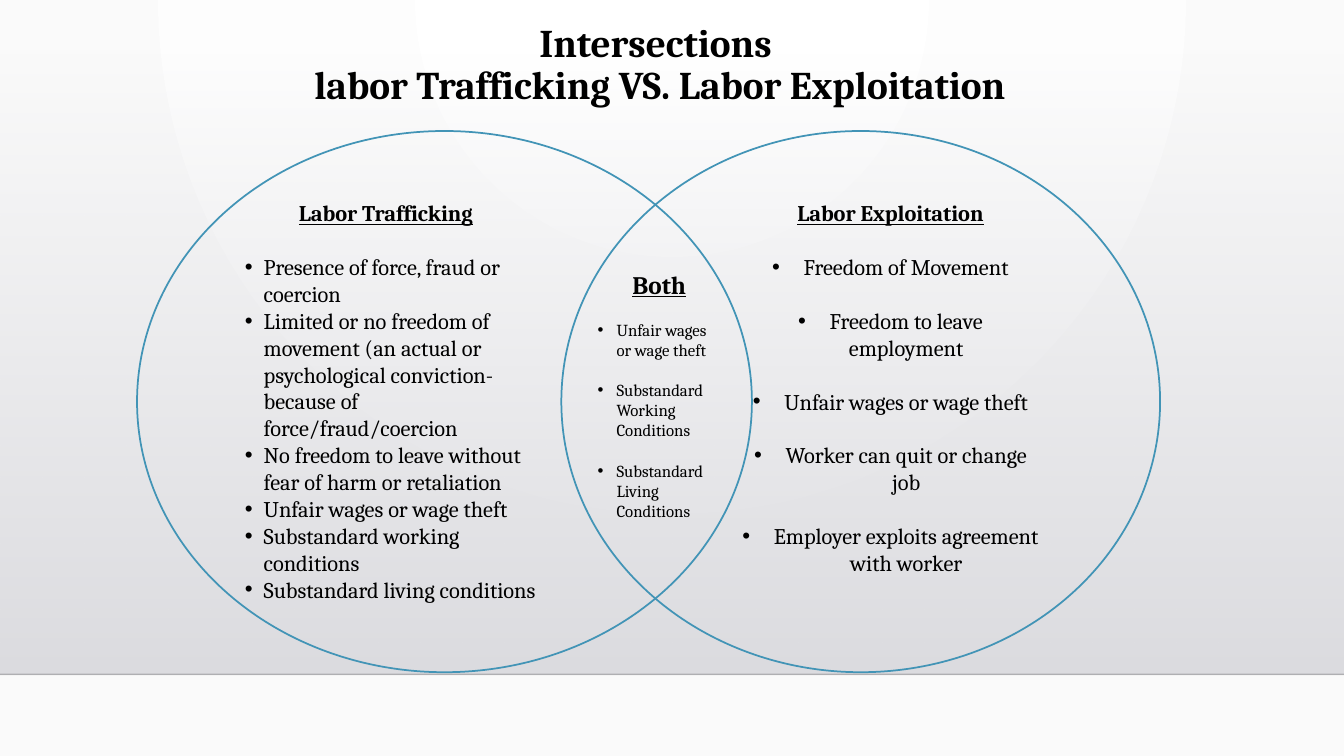
from lxml.etree import SubElement
from pptx import Presentation
from pptx.dml.color import RGBColor
from pptx.enum.shapes import MSO_CONNECTOR as Connector, MSO_SHAPE as Shape
from pptx.enum.text import MSO_ANCHOR as Anchor, PP_ALIGN as Align
from pptx.oxml.ns import qn
from pptx.util import Pt

BLACK = RGBColor(0, 0, 0)
WHITE = RGBColor(0xFF, 0xFF, 0xFF)
PAPER = RGBColor(0xFA, 0xFA, 0xFA)
MIST = RGBColor(0xDC, 0xDC, 0xE0)
FOG = RGBColor(0xDE, 0xDE, 0xE2)
BLUE = RGBColor(0x42, 0x94, 0xB6)

WIDTH, HEIGHT, FLOOR = 960, 540, 481.7
CIRCLE_TOP, CIRCLE_HEIGHT = 93.6, 386.6
LINE_16, LINE_12 = 19.2, 14.4

TRAFFICKING = [
    "Presence of force, fraud or coercion",
    "Limited or no freedom of movement (an actual or psychological "
    "conviction-because of force/fraud/coercion",
    "No freedom to leave without fear of harm or retaliation",
    "Unfair wages or wage theft",
    "Substandard working conditions",
    "Substandard living conditions",
]
BOTH = [
    "Unfair wages or wage theft",
    "Substandard Working Conditions",
    "Substandard Living Conditions",
]
EXPLOITATION = [
    "Freedom of Movement",
    "Freedom to leave employment",
    "Unfair wages or wage theft",
    "Worker can quit or change job",
    "Employer exploits agreement with worker",
]


def apply(target, values):
    for name, value in values.items():
        setattr(target, name, value)


class VennSlide:
    def __init__(self, page):
        self.page = page
        self.font = {"name": "Cambria", "color": BLACK}

    def gradient(self, fill, colors):
        fill.gradient()
        for stop, color in zip(fill.gradient_stops, colors):
            stop.color.rgb = color

    def transparency(self, element, opacity):
        color = next(element.iter(qn("a:srgbClr")))
        SubElement(color, qn("a:alpha"), val=str(opacity * 1000))

    def background(self):
        self.gradient(self.page.background.fill, (WHITE, PAPER))
        grad = next(self.page.element.iter(qn("a:gradFill")))
        grad.remove(grad.find(qn("a:lin")))
        circle = SubElement(grad, qn("a:path"), {"path": "circle"})
        SubElement(circle, qn("a:fillToRect"), l="43000", t="0", r="43000", b="100000")

    def wall(self, top):
        wall = self.page.shapes.add_shape(
            Shape.RECTANGLE, 0, Pt(top), Pt(WIDTH), Pt(FLOOR - top))
        wall.shadow.inherit = False
        self.gradient(wall.fill, (MIST, FOG))
        wall.fill.gradient_angle = 270
        self.transparency(wall.element.spPr, 0)
        wall.line.fill.background()

    def floor_line(self):
        edge = self.page.shapes.add_connector(
            Connector.STRAIGHT, 0, Pt(FLOOR), Pt(WIDTH), Pt(FLOOR))
        edge.line.color.rgb = BLACK
        edge.line.width = Pt(1)
        self.transparency(edge.element.spPr, 20)
        SubElement(edge.element.spPr, qn("a:effectLst"))

    def circle(self, left, width):
        circle = self.page.shapes.add_shape(
            Shape.FLOWCHART_CONNECTOR, Pt(left), Pt(CIRCLE_TOP), Pt(width), Pt(CIRCLE_HEIGHT))
        circle.shadow.inherit = False
        circle.fill.background()
        circle.line.color.rgb = BLUE
        circle.line.width = Pt(1.25)

    def text_box(self, left, top, width, height):
        box = self.page.shapes.add_textbox(Pt(left), Pt(top), Pt(width), Pt(height))
        apply(box.text_frame, {"word_wrap": True, "vertical_anchor": Anchor.TOP})
        return box.text_frame

    def span(self, para, text, size, **style):
        span = para.add_run()
        span.text = text
        apply(span.font, {"name": self.font["name"], "size": Pt(size), **style})
        span.font.color.rgb = self.font["color"]

    def title(self, lines, place):
        para = self.text_box(*place).paragraphs[0]
        apply(para, {"alignment": Align.CENTER, "line_spacing": 0.9})
        for index, line in enumerate(lines):
            if index:
                para.add_line_break()
            self.span(para, line, 28, bold=True)

    def bullet(self, para, hang):
        properties = para._p.get_or_add_pPr()
        properties.set("marL", str(Pt(hang)))
        properties.set("indent", str(-Pt(hang)))
        SubElement(properties, qn("a:buFont"), typeface="Arial")
        SubElement(properties, qn("a:buChar"), char="•")

    def column(self, place, heading, items, sizes, hang, align, gaps, shift=0):
        frame = self.text_box(*place)
        para = frame.paragraphs[0]
        para.alignment = Align.LEFT if shift else Align.CENTER
        if shift:
            para._p.get_or_add_pPr().set("marL", str(Pt(shift)))
        self.span(para, heading, sizes[0], bold=True, underline=True)
        for index, item in enumerate(items):
            para = frame.add_paragraph()
            self.bullet(para, hang)
            apply(para, {"alignment": align, "space_before": Pt(gaps[min(index, 1)])})
            self.span(para, item, sizes[1])


def main():
    deck = Presentation()
    apply(deck, {"slide_width": Pt(WIDTH), "slide_height": Pt(HEIGHT)})
    venn = VennSlide(deck.slides.add_slide(deck.slide_layouts[6]))
    venn.background()
    venn.wall(36.7)
    venn.floor_line()
    venn.title(["Intersections ", "labor Trafficking VS. Labor Exploitation"],
               (135.4, 13, 671.8, 126))
    venn.column((167.8, 139, 232.6, 319.7), "Labor Trafficking", TRAFFICKING,
                (16, 16), 13.5, Align.LEFT, (LINE_16, 0), shift=38.6)
    venn.circle(97.9, 439.2)
    venn.circle(401, 427.7)
    venn.column((419.8, 188.6, 102.2, 188.6), "Both", BOTH,
                (18, 12), 13.5, Align.LEFT, (LINE_12, LINE_12))
    venn.column((522, 139, 228.2, 337), "Labor Exploitation", EXPLOITATION,
                (16, 16), 22.5, Align.CENTER, (LINE_16, LINE_16))
    deck.save("out.pptx")


if __name__ == "__main__":
    main()
